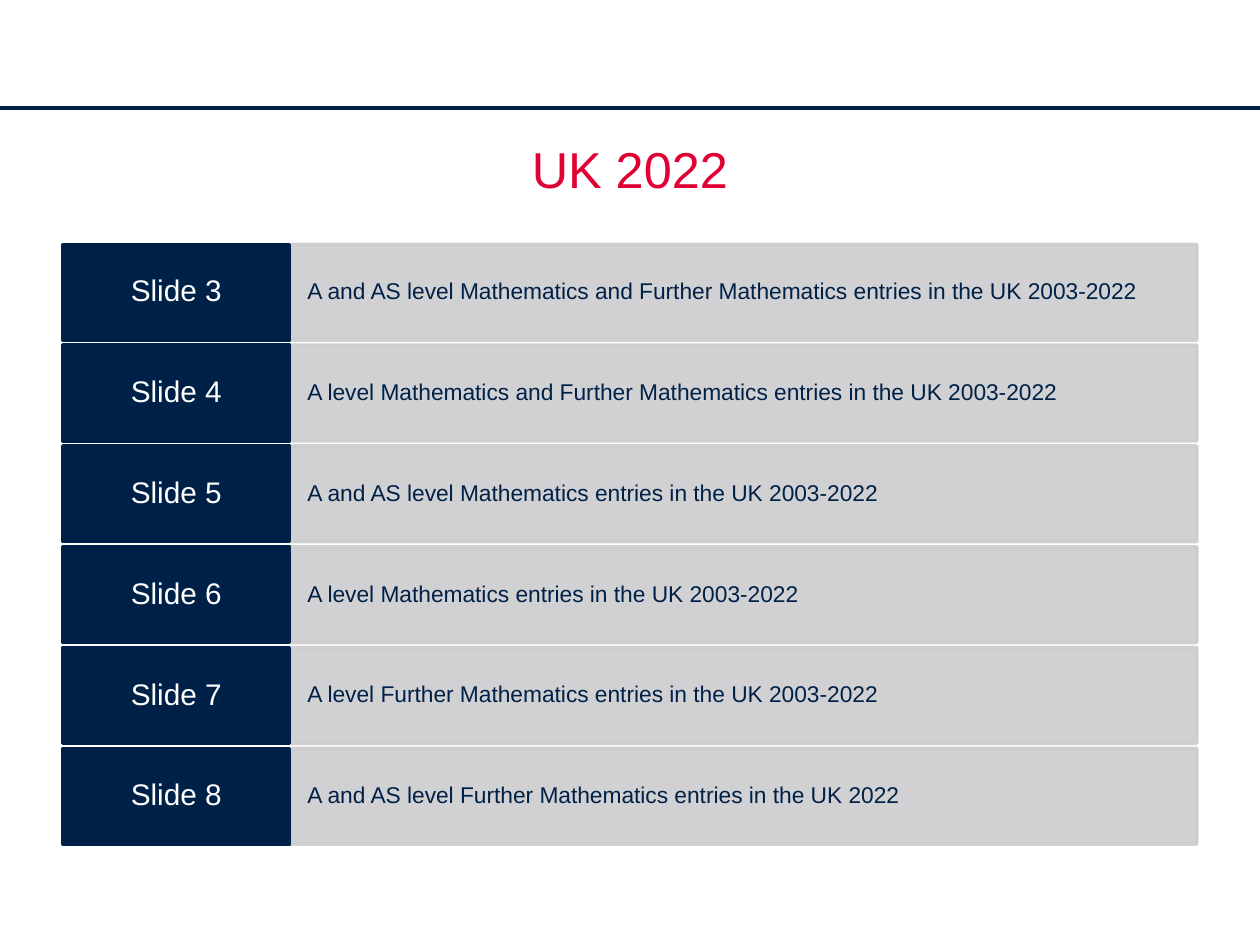
from lxml.etree import SubElement
from pptx import Presentation
from pptx.dml.color import RGBColor
from pptx.enum.shapes import MSO_CONNECTOR, MSO_SHAPE
from pptx.enum.text import MSO_ANCHOR as Anchor, PP_ALIGN as Align
from pptx.oxml.ns import qn
from pptx.util import Emu, Pt

# One scale: 100 px to the inch
EMU_PER_PX = 9144
SLIDE_WIDTH, SLIDE_HEIGHT = 1000, 750

NAVY = RGBColor(0x00, 0x21, 0x47)
GREY = RGBColor(0xCC, 0xCD, 0xCF)
RED = RGBColor(0xE0, 0x00, 0x34)
WHITE = RGBColor(0xFF, 0xFF, 0xFF)

TITLE = {"size": 28.8, "color": RED, "align": Align.CENTER,
         "anchor": Anchor.TOP, "insets": (10, 8), "after": 0}
LABEL = {"size": 17, "color": WHITE, "align": Align.CENTER,
         "anchor": Anchor.MIDDLE, "insets": (10, 7), "after": 0}
ENTRY = {"size": 13, "color": NAVY, "align": Align.LEFT,
         "anchor": Anchor.MIDDLE, "insets": (14, 19), "after": 0}

ENTRIES = [
    ("Slide 3", "A and AS level Mathematics and Further Mathematics entries in the UK 2003-2022"),
    ("Slide 4", "A level Mathematics and Further Mathematics entries in the UK 2003-2022"),
    ("Slide 5", "A and AS level Mathematics entries in the UK 2003-2022"),
    ("Slide 6", "A level Mathematics entries in the UK 2003-2022"),
    ("Slide 7", "A level Further Mathematics entries in the UK 2003-2022"),
    ("Slide 8", "A and AS level Further Mathematics entries in the UK 2022"),
]


def px(length):
    return Emu(length * EMU_PER_PX)


def write_text(shape, text, style):
    frame = shape.text_frame
    across, down = style["insets"]
    frame_format = {
        "word_wrap": True, "vertical_anchor": style["anchor"],
        "margin_left": px(across), "margin_right": px(across),
        "margin_top": px(down), "margin_bottom": px(down),
    }
    paragraph = frame.paragraphs[0]
    paragraph.text = text
    paragraph_format = {"alignment": style["align"], "line_spacing": 0.9,
                        "space_after": Pt(style["after"])}
    font_format = {"name": "Arial", "size": Pt(style["size"])}
    for target, values in ((frame, frame_format), (paragraph, paragraph_format),
                           (paragraph.font, font_format)):
        for name, value in values.items():
            setattr(target, name, value)
    paragraph.font.color.rgb = style["color"]


def add_panel(slide, box, color, text, style, opacity=100):
    shape = slide.shapes.add_shape(MSO_SHAPE.RECTANGLE, *map(px, box))
    shape.shadow.inherit = False
    shape.fill.solid()
    shape.fill.fore_color.rgb = color
    shape.line.color.rgb = color
    shape.line.width = Pt(2)
    if opacity < 100:
        for element in shape.element.spPr.iter(qn("a:srgbClr")):
            SubElement(element, qn("a:alpha"), val=str(opacity * 1000))
    write_text(shape, text, style)


def add_header(slide, box):
    left, top, width, height = box
    # Rule across the whole slide
    rule = slide.shapes.add_connector(
        MSO_CONNECTOR.STRAIGHT, px(left), px(top), px(left + width), px(top))
    rule.line.color.rgb = NAVY
    rule.line.width = Pt(2.25)
    SubElement(rule.element.spPr, qn("a:effectLst"))
    # Title below the rule
    margin, drop = 50, 21
    title = slide.shapes.add_textbox(px(left + margin), px(top + drop),
                                     px(width - 2 * margin), px(height - drop))
    write_text(title, "UK 2022", TITLE)


def add_contents(slide, box, entries):
    left, top, width, height = box
    label_width, gap = 180, 4
    row_height = (height + gap) // len(entries) - gap
    for index, (label, entry) in enumerate(entries):
        row_top = top + index * (row_height + gap)
        add_panel(slide, (left + label_width, row_top, width - label_width, row_height),
                  GREY, entry, ENTRY, opacity=90)
        add_panel(slide, (left, row_top, label_width, row_height), NAVY, label, LABEL)


def main():
    presentation = Presentation()
    presentation.slide_width = px(SLIDE_WIDTH)
    presentation.slide_height = px(SLIDE_HEIGHT)
    slide = presentation.slides.add_slide(presentation.slide_layouts[6])
    add_header(slide, (0, 86, SLIDE_WIDTH, 105))
    add_contents(slide, (50, 194, 900, 476), ENTRIES)
    presentation.save("out.pptx")


if __name__ == "__main__":
    main()
